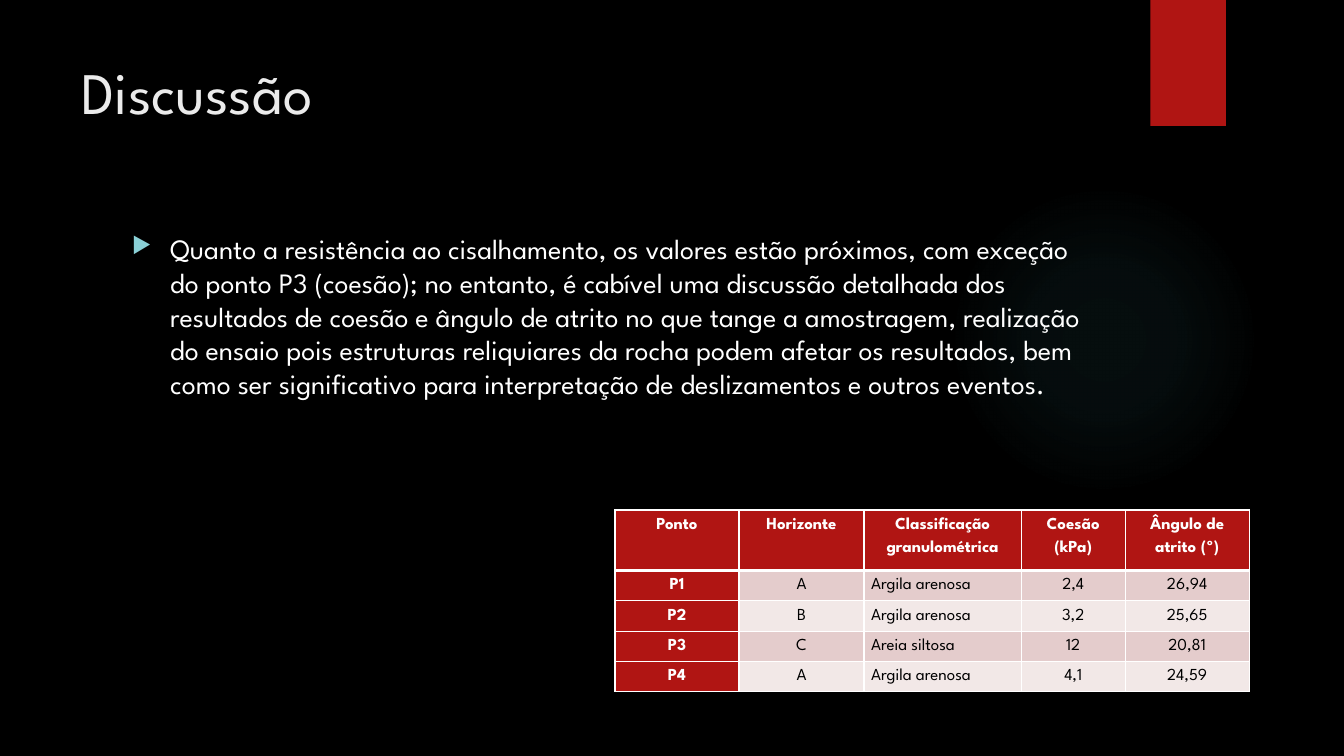
from dataclasses import dataclass

from lxml import etree
from pptx import Presentation
from pptx.dml.color import RGBColor
from pptx.enum.shapes import MSO_SHAPE
from pptx.enum.text import MSO_ANCHOR, PP_ALIGN
from pptx.oxml import parse_xml
from pptx.oxml.ns import nsdecls, qn
from pptx.util import Inches, Pt

ELLIPSE, RECTANGLE = MSO_SHAPE.OVAL, MSO_SHAPE.RECTANGLE
LEFT, CENTER = PP_ALIGN.LEFT, PP_ALIGN.CENTER
TOP = MSO_ANCHOR.TOP


@dataclass(frozen=True)
class Theme:
    font: str = "League Spartan"
    bullet_font: str = "OpenSymbol"
    background: str = "000000"
    accent: str = "B01513"
    glow: str = "50B9C1"
    bullet: str = "8AD0D6"
    title: str = "EBEBEB"
    light: str = "FFFFFF"
    dark: str = "000000"
    bands: tuple = ("E4CCCC", "F2E8E7")
    title_size: int = 42
    body_size: int = 20
    table_size: int = 12
    text_spacing: float = 1.0
    table_spacing: float = 1.5


THEME = Theme()

TITLE = "Discussão"
DISCUSSION = (
    "Quanto a resistência ao cisalhamento, os valores estão próximos, com exceção "
    "do ponto P3 (coesão); no entanto, é cabível uma discussão detalhada dos "
    "resultados de coesão e ângulo de atrito no que tange a amostragem, realização "
    "do ensaio pois estruturas reliquiares da rocha podem afetar os resultados, bem "
    "como ser significativo para interpretação de deslizamentos e outros eventos."
)
SHEAR_RESULTS = [
    ["Ponto", "Horizonte", "Classificação granulométrica", "Coesão\n(kPa)",
     "Ângulo de atrito (º)"],
    ["P1", "A", "Argila arenosa", "2,4", "26,94"],
    ["P2", "B", "Argila arenosa", "3,2", "25,65"],
    ["P3", "C", "Areia siltosa", "12", "20,81"],
    ["P4", "A", "Argila arenosa", "4,1", "24,59"],
]
COLUMN_WIDTHS = [1.23, 1.24, 1.56, 1.03, 1.23]
CLASSIFICATION_COLUMN = 2


def format_paragraph(paragraph, size, color, spacing, align=LEFT, bold=False):
    paragraph.alignment = align
    paragraph.line_spacing = spacing
    font_format = {"name": THEME.font, "size": Pt(size), "bold": bold}
    for attribute, value in font_format.items():
        setattr(paragraph.font, attribute, value)
    paragraph.font.color.rgb = RGBColor.from_string(color)


def add_plain_shape(slide, preset, box):
    shape = slide.shapes.add_shape(preset, *map(Inches, box))
    shape.shadow.inherit = False
    shape.line.fill.background()
    return shape


def add_glow(slide, box):
    """Add a faint round light that fades out towards its edge."""
    glow = add_plain_shape(slide, ELLIPSE, box)
    stops = "".join(
        f'<a:gs pos="{position * 1000}"><a:srgbClr val="{THEME.glow}">'
        f'<a:alpha val="{opacity * 1000}"/></a:srgbClr></a:gs>'
        for position, opacity in [(0, 7), (36, 6), (69, 0)]
    )
    glow.fill.gradient()
    gradient = glow.element.spPr.find(qn("a:gradFill"))
    gradient.getparent().replace(gradient, parse_xml(
        f'<a:gradFill {nsdecls("a")}><a:gsLst>{stops}</a:gsLst><a:path path="circle">'
        '<a:fillToRect l="50000" t="50000" r="50000" b="50000"/></a:path></a:gradFill>'
    ))


def add_ribbon(slide, box):
    ribbon = add_plain_shape(slide, RECTANGLE, box)
    ribbon.fill.solid()
    ribbon.fill.fore_color.rgb = RGBColor.from_string(THEME.accent)


def add_text(slide, box, text):
    frame = slide.shapes.add_textbox(*map(Inches, box)).text_frame
    frame.word_wrap = True
    frame.vertical_anchor = TOP
    frame.text = text
    return frame.paragraphs[0]


def add_title(slide, box):
    title = add_text(slide, box, TITLE)
    format_paragraph(title, THEME.title_size, THEME.title, THEME.text_spacing)


def add_discussion(slide, box):
    discussion = add_text(slide, box, DISCUSSION)
    properties = discussion._p.get_or_add_pPr()
    indent = Inches(0.38)
    properties.set("marL", str(indent))
    properties.set("indent", str(-indent))
    bullet_color = etree.SubElement(properties, qn("a:buClr"))
    etree.SubElement(bullet_color, qn("a:srgbClr"), val=THEME.bullet)
    etree.SubElement(properties, qn("a:buSzPct"), val="80000")
    etree.SubElement(properties, qn("a:buFont"), typeface=THEME.bullet_font)
    etree.SubElement(properties, qn("a:buChar"), char="▶")
    format_paragraph(discussion, THEME.body_size, THEME.light, THEME.text_spacing)


def set_borders(cell, widths):
    """Draw the left, right, top and bottom borders with the given point widths."""
    properties = cell._tc.get_or_add_tcPr()
    for position, (side, width) in enumerate(zip("LRTB", widths)):
        properties.insert(position, parse_xml(
            f'<a:ln{side} {nsdecls("a")} w="{Pt(width)}"><a:solidFill>'
            f'<a:srgbClr val="{THEME.light}"/></a:solidFill></a:ln{side}>'
        ))


def fill_cell(cell, text, row, column):
    is_heading = row == 0 or column == 0
    fill = THEME.accent if is_heading else THEME.bands[(row - 1) % 2]
    margins = {"margin_left": 0.07, "margin_right": 0.07,
               "margin_top": 0, "margin_bottom": 0}
    for attribute, value in margins.items():
        setattr(cell, attribute, Inches(value))
    cell.text = text
    cell.fill.solid()
    cell.fill.fore_color.rgb = RGBColor.from_string(fill)
    align = LEFT if row and column == CLASSIFICATION_COLUMN else CENTER
    color = THEME.light if is_heading else THEME.dark
    for paragraph in cell.text_frame.paragraphs:
        format_paragraph(paragraph, THEME.table_size, color, THEME.table_spacing,
                         align, is_heading)
    set_borders(cell, (1, 1, 3 if row == 1 else 1, 3 if row == 0 else 1))


def add_shear_table(slide, box):
    """Add the table of results, with rows as tall as their text needs."""
    table = slide.shapes.add_table(
        len(SHEAR_RESULTS), len(COLUMN_WIDTHS), *map(Inches, box)).table
    for column, width in zip(table.columns, COLUMN_WIDTHS):
        column.width = Inches(width)
    for row, values in enumerate(SHEAR_RESULTS):
        table.rows[row].height = Inches(0)
        for column, text in enumerate(values):
            fill_cell(table.cell(row, column), text, row, column)


def main():
    presentation = Presentation()
    presentation.slide_width = Inches(13.33)
    presentation.slide_height = Inches(7.5)
    slide = presentation.slides.add_slide(presentation.slide_layouts[6])
    slide.background.fill.solid()
    slide.background.fill.fore_color.rgb = RGBColor.from_string(THEME.background)
    add_glow(slide, (9.41, 1.83, 3.08, 3.08))
    add_ribbon(slide, (11.41, 0, 0.75, 1.25))
    add_title(slide, (0.71, 0.5, 10.29, 1.53))
    add_shear_table(slide, (6.1, 5.06, sum(COLUMN_WIDTHS), 1.61))
    add_discussion(slide, (1.21, 2.25, 9.78, 4.59))
    presentation.save("out.pptx")


if __name__ == "__main__":
    main()
